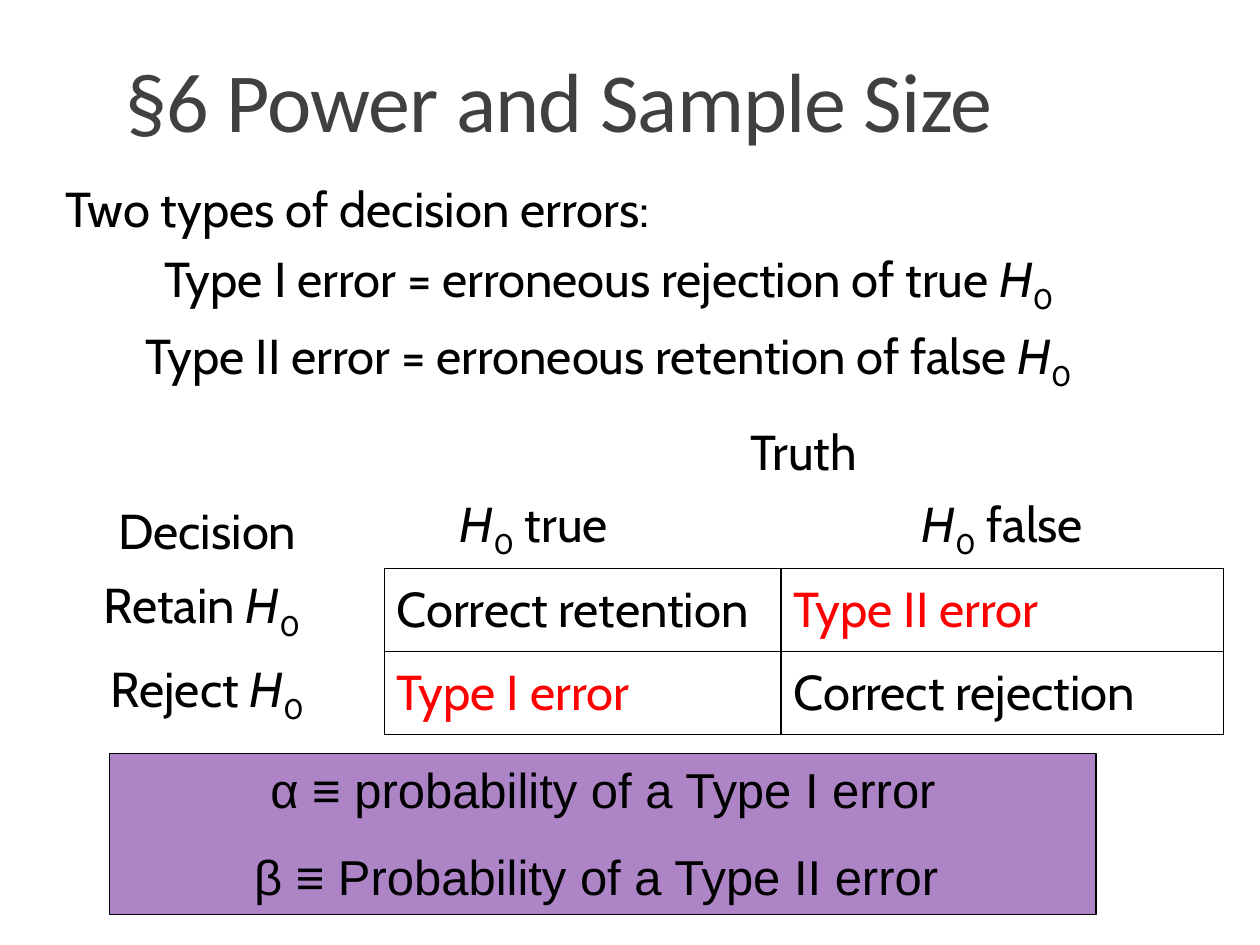
from dataclasses import dataclass

from lxml.etree import SubElement
from pptx import Presentation
from pptx.dml.color import RGBColor
from pptx.enum.shapes import MSO_SHAPE
from pptx.enum.text import MSO_ANCHOR, PP_ALIGN
from pptx.oxml.ns import qn
from pptx.util import Inches, Pt


@dataclass(frozen=True)
class Theme:
    black: RGBColor = RGBColor(0x00, 0x00, 0x00)
    title: RGBColor = RGBColor(0x40, 0x40, 0x40)
    error: RGBColor = RGBColor(0xFF, 0x00, 0x00)
    panel: RGBColor = RGBColor(0xAD, 0x84, 0xC6)
    title_size: Pt = Pt(48)
    body_size: Pt = Pt(28)
    title_font: str = "Calibri"
    body_font: str = "Cabin"
    panel_font: str = "Arial"


theme = Theme()


def write(para, text, align, space, font=theme.body_font, color=theme.black):
    """Fill a paragraph, setting each H₀ as an italic H with a subscript 0."""
    para.alignment = align
    para.space_before = Pt(space)
    before, symbol, after = text.partition("H₀")
    for part in (before, *symbol, after):
        if not part:
            continue
        span = para.add_run()
        span.text = "0" if part == "₀" else part
        span.font.name = font
        span.font.size = theme.body_size
        span.font.color.rgb = color
        if part == "H":
            span.font.italic = True
        elif part == "₀":
            span.font._element.set("baseline", "-25000")


def draw_border(cell, side, visible):
    line = SubElement(cell._tc.get_or_add_tcPr(), qn(f"a:ln{side}"), w=str(Pt(1)))
    if visible:
        fill = SubElement(line, qn("a:solidFill"))
        SubElement(fill, qn("a:srgbClr"), val=str(theme.black))
    else:
        SubElement(line, qn("a:noFill"))


deck = Presentation()
deck.slide_width, deck.slide_height = Inches(10), Inches(7.5)
page = deck.slides.add_slide(deck.slide_layouts[6])

# Title
title = page.shapes.add_textbox(Inches(0.9), Inches(0.31), Inches(8.25), Inches(0.93))
title.text_frame.word_wrap = True
title.text_frame.vertical_anchor = MSO_ANCHOR.BOTTOM
para = title.text_frame.paragraphs[0]
para.text = "§6 Power and Sample Size"
para.line_spacing = 0.85
span = para.runs[0]
span.font.name = theme.title_font
span.font.size = theme.title_size
span.font.color.rgb = theme.title
span.font._element.set("spc", "-50")

# Decision table: the four outcomes are ruled, the headings are not
LEFT, CENTER = PP_ALIGN.LEFT, PP_ALIGN.CENTER
rows = [
    ["", "Truth", ""],
    ["Decision", "H₀ true", "H₀ false"],
    ["Retain H₀ ", "Correct retention", "Type II error"],
    ["Reject H₀", "Type I error", "Correct rejection"],
]
outcomes = {(row, column) for row in (2, 3) for column in (1, 2)}
neighbours = {"L": (0, -1), "R": (0, 1), "T": (-1, 0), "B": (1, 0)}

table = page.shapes.add_table(
    4, 3, Inches(0.24), Inches(3.31), Inches(9.47), Inches(2.46)
).table
table.first_row = table.horz_banding = False
for column, width in zip(table.columns, (2.81, 3.15, 3.51)):
    column.width = Inches(width)
for row, height in zip(table.rows, (0.57, 0.57, 0.66, 0.66)):
    row.height = Inches(height)
table.cell(0, 1).merge(table.cell(0, 2))

for r, texts in enumerate(rows):
    for c, text in enumerate(texts):
        cell = table.cell(r, c)
        for side, (down, across) in neighbours.items():
            draw_border(cell, side, bool({(r, c), (r + down, c + across)} & outcomes))
        cell.fill.background()
        if not text:
            continue
        heading = text in ("Truth", "Decision")
        cell.vertical_anchor = MSO_ANCHOR.BOTTOM if heading else MSO_ANCHOR.MIDDLE
        para = cell.text_frame.paragraphs[0]
        indented = text == "H₀ true"
        write(
            para,
            text,
            LEFT if (r, c) in outcomes or indented else CENTER,
            3,
            color=theme.error if text.endswith("error") else theme.black,
        )
        if indented:
            para.level = 1
            para._p.get_or_add_pPr().set("marL", str(Inches(0.5)))

# Probability panel
panel = page.shapes.add_shape(
    MSO_SHAPE.RECTANGLE, Inches(0.87), Inches(5.98), Inches(7.83), Inches(1.28)
)
panel.shadow.inherit = False
panel.fill.solid()
panel.fill.fore_color.rgb = theme.panel
panel.line.color.rgb = theme.black
panel.line.width = Pt(0.75)

# Definitions of the two errors
definitions = page.shapes.add_textbox(
    Inches(0.42), Inches(1.37), Inches(8.82), Inches(1.69)
)

paragraphs = [
    (panel, theme.panel_font, 16, [
        ("α ≡ probability of a Type I error", CENTER),
        ("β ≡ Probability of a Type II error ", CENTER),
    ]),
    (definitions, theme.body_font, 6, [
        ("Two types of decision errors:", LEFT),
        ("Type I error = erroneous rejection of true H₀", CENTER),
        ("Type II error = erroneous retention of false H₀", CENTER),
    ]),
]
for box, font, space, lines in paragraphs:
    frame = box.text_frame
    frame.word_wrap = True
    frame.vertical_anchor = MSO_ANCHOR.TOP
    for index, (text, align) in enumerate(lines):
        para = frame.add_paragraph() if index else frame.paragraphs[0]
        write(para, text, align, space, font)

deck.save("out.pptx")
